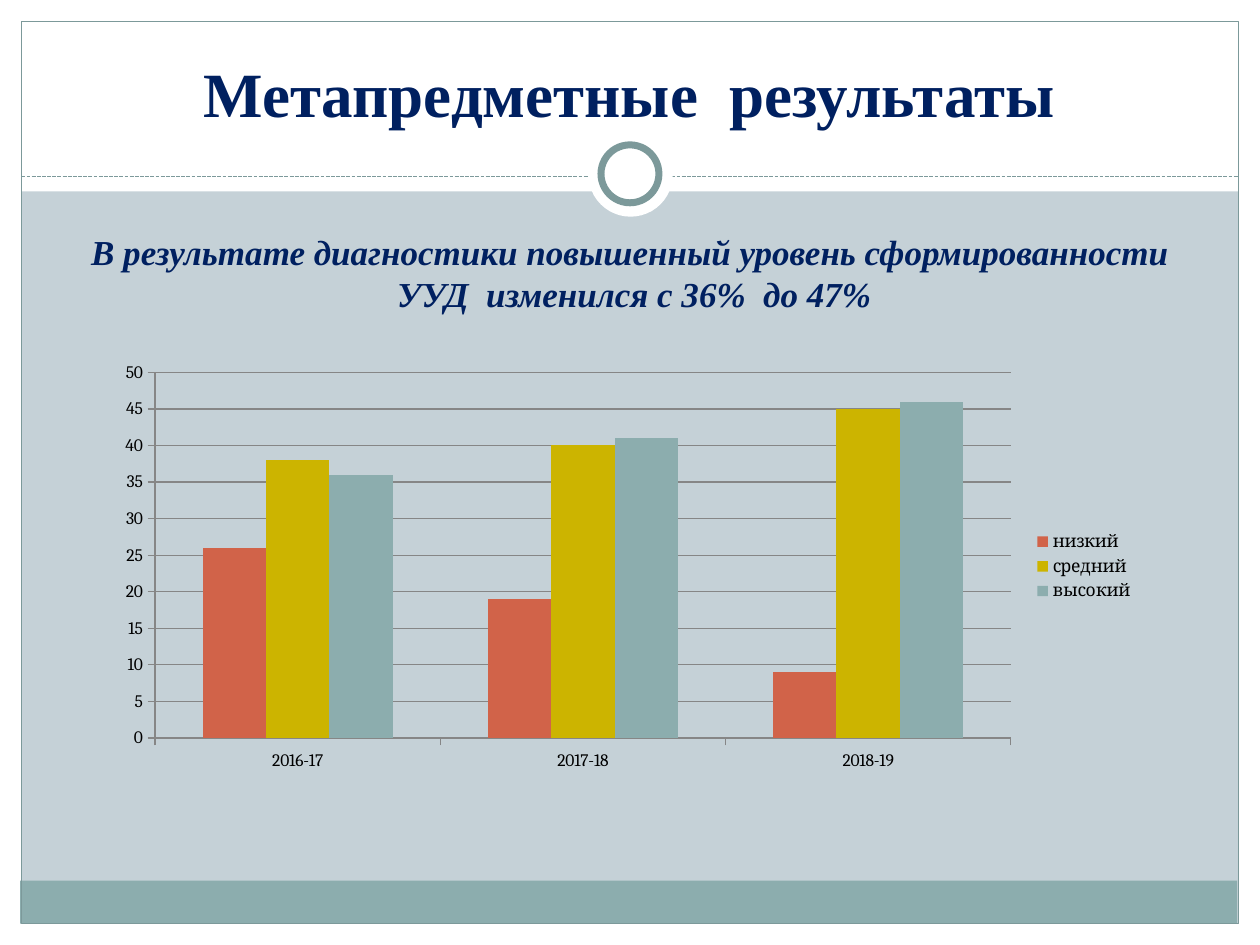
from dataclasses import dataclass
from typing import Optional

from lxml import etree
from pptx import Presentation
from pptx.chart.data import CategoryChartData
from pptx.dml.color import RGBColor
from pptx.enum.chart import XL_CHART_TYPE as ChartType
from pptx.enum.chart import XL_LEGEND_POSITION as LegendPos
from pptx.enum.chart import XL_TICK_MARK as Tick
from pptx.enum.dml import MSO_LINE as Dash
from pptx.enum.shapes import MSO_CONNECTOR as Connector
from pptx.enum.shapes import MSO_SHAPE as Shape
from pptx.enum.text import MSO_ANCHOR as Anchor
from pptx.enum.text import MSO_AUTO_SIZE as AutoSize
from pptx.enum.text import PP_ALIGN as Align
from pptx.oxml.ns import qn
from pptx.util import Inches, Pt

COLORS = {
    "background": "C5D1D7",
    "white": "FFFFFF",
    "band": "8CADAE",
    "frame": "7C999A",
    "navy": "002060",
    "black": "000000",
    "grid": "868686",
    "low": "D16349",
    "middle": "CCB400",
    "high": "8CADAE",
}
WIDTH, HEIGHT, MARGIN = 10, 7.5, 0.17


@dataclass
class Block:
    left: float
    top: float
    width: float
    height: float
    fill: Optional[str] = "white"
    line: Optional[str] = None
    weight: float = 0.75
    kind: Shape = Shape.RECTANGLE


@dataclass
class Level:
    name: str
    color: str
    values: tuple


BORDERS = [
    Block(0, HEIGHT - MARGIN, WIDTH, MARGIN),
    Block(0, 0, WIDTH, 1.52),
    Block(0, 0, MARGIN, HEIGHT),
    Block(WIDTH - MARGIN, 0, MARGIN, HEIGHT),
    Block(0.16, 6.99, 9.66, 0.34, fill="band"),
    Block(MARGIN, MARGIN, WIDTH - 2 * MARGIN, HEIGHT - 2 * MARGIN,
          fill=None, line="frame"),
]
RINGS = [
    Block(4.67, 1.05, 0.67, 0.67, kind=Shape.OVAL),
    Block(4.77, 1.15, 0.46, 0.46, line="frame", weight=4, kind=Shape.OVAL),
]
YEARS = ("2016-17", "2017-18", "2018-19")
LEVELS = [
    Level("низкий", "low", (26, 19, 9)),
    Level("средний", "middle", (38, 40, 45)),
    Level("высокий", "high", (36, 41, 46)),
]


def rgb(name: str) -> RGBColor:
    return RGBColor.from_string(COLORS[name])


def add_block(slide, block: Block) -> None:
    sp = slide.shapes.add_shape(
        block.kind, Inches(block.left), Inches(block.top),
        Inches(block.width), Inches(block.height))
    sp.shadow.inherit = False
    if block.fill:
        sp.fill.solid()
        sp.fill.fore_color.rgb = rgb(block.fill)
    else:
        sp.fill.background()
    if block.line:
        sp.line.color.rgb = rgb(block.line)
        sp.line.width = Pt(block.weight)
    else:
        sp.line.fill.background()


def add_divider(slide, y: float) -> None:
    line = slide.shapes.add_connector(
        Connector.STRAIGHT, Inches(MARGIN), Inches(y),
        Inches(WIDTH - MARGIN), Inches(y))
    line.line.color.rgb = rgb("frame")
    line.line.width = Pt(0.75)
    line.line.dash_style = Dash.SQUARE_DOT
    etree.SubElement(line.element.spPr, qn("a:effectLst"))


def write_text(sp, text: str, *, size: float, italic: bool = False,
               anchor: Anchor = Anchor.TOP,
               auto_size: AutoSize = AutoSize.NONE) -> None:
    tf = sp.text_frame
    tf.word_wrap = True
    tf.auto_size = auto_size
    tf.vertical_anchor = anchor
    p = tf.paragraphs[0]
    p.alignment = Align.CENTER
    r = p.add_run()
    r.text = text
    r.font.name = "Times New Roman"
    r.font.size = Pt(size)
    r.font.bold = True
    r.font.italic = italic
    r.font.color.rgb = rgb("navy")


def add_title(slide, text: str) -> None:
    title = slide.shapes.title
    title.left, title.top = Inches(0.33), Inches(0.25)
    title.width, title.height = Inches(9.33), Inches(0.83)
    write_text(title, text, size=36, anchor=Anchor.BOTTOM)
    title.element.getparent().append(title.element)


def add_level_chart(slide) -> None:
    data = CategoryChartData()
    data.categories = YEARS
    for level in LEVELS:
        data.add_series(level.name, level.values)
    chart = slide.shapes.add_chart(
        ChartType.COLUMN_CLUSTERED, Inches(0.83), Inches(2.81),
        Inches(8.27), Inches(3.37), data).chart
    chart.has_title = False
    chart.font.name = "Cambria"
    chart.font.size = Pt(10)
    chart.font.color.rgb = rgb("black")
    chart.has_legend = True
    chart.legend.position = LegendPos.RIGHT
    chart.legend.include_in_layout = False

    plot = chart.plots[0]
    plot.gap_width = 150
    plot.overlap = 0
    plot.vary_by_categories = False
    for series, level in zip(plot.series, LEVELS):
        series.format.fill.solid()
        series.format.fill.fore_color.rgb = rgb(level.color)

    values = chart.value_axis
    values.minimum_scale, values.maximum_scale = 0, 50
    values.major_unit = 5
    values.has_major_gridlines = True
    for axis in (chart.category_axis, values):
        axis.major_tick_mark = Tick.OUTSIDE
        axis.minor_tick_mark = Tick.NONE
    for part in (chart.category_axis, values, values.major_gridlines):
        part.format.line.color.rgb = rgb("grid")
        part.format.line.width = Pt(0.75)


def main() -> None:
    prs = Presentation()
    prs.slide_width, prs.slide_height = Inches(WIDTH), Inches(HEIGHT)
    slide = prs.slides.add_slide(prs.slide_layouts[5])
    slide.background.fill.solid()
    slide.background.fill.fore_color.rgb = rgb("background")

    for block in BORDERS:
        add_block(slide, block)
    add_divider(slide, 1.4)
    for ring in RINGS:
        add_block(slide, ring)
    add_title(slide, "Метапредметные  результаты")
    add_level_chart(slide)
    summary = slide.shapes.add_textbox(
        Inches(0.35), Inches(1.78), Inches(9.37), Inches(0.77))
    write_text(summary, "В результате диагностики повышенный уровень "
               "сформированности  УУД  изменился с 36%  до 47%",
               size=20, italic=True, auto_size=AutoSize.SHAPE_TO_FIT_TEXT)
    prs.save("out.pptx")


if __name__ == "__main__":
    main()
